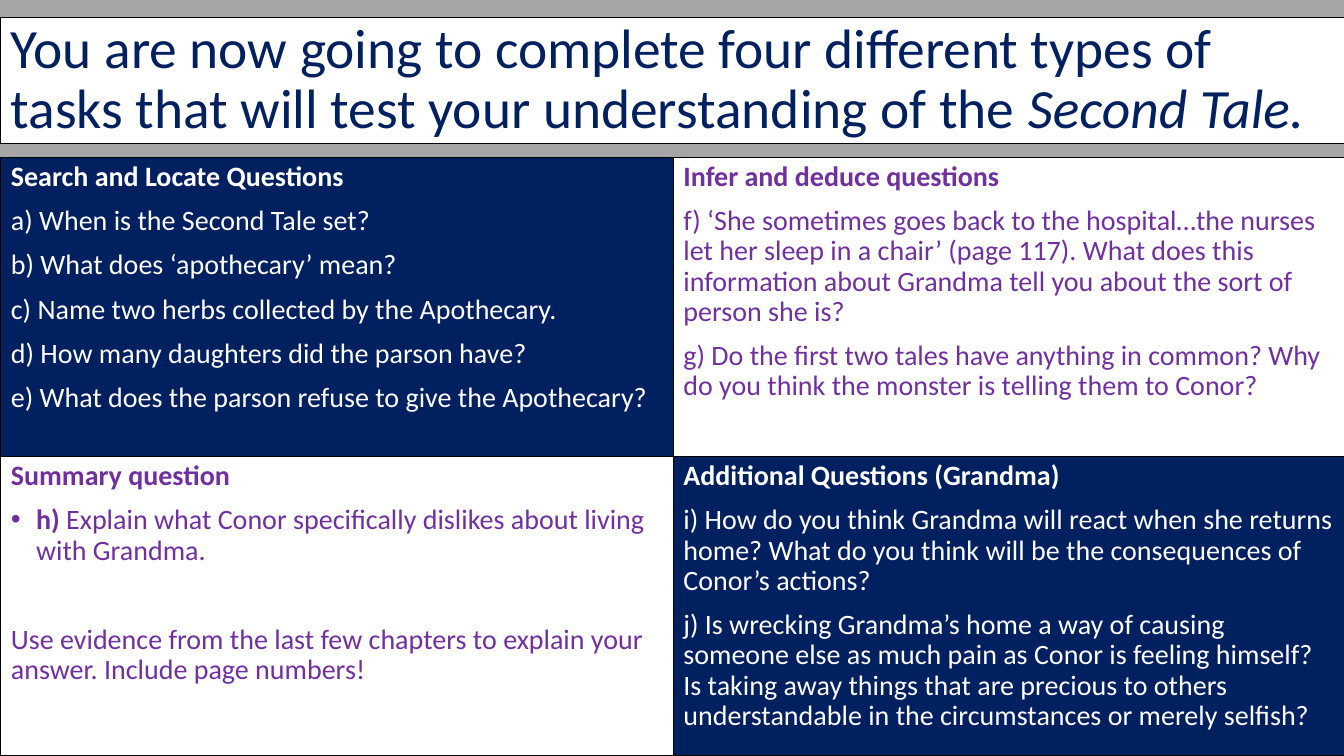
from pptx import Presentation
from pptx.dml.color import RGBColor
from pptx.enum.shapes import MSO_SHAPE
from pptx.enum.text import MSO_ANCHOR, PP_ALIGN
from pptx.oxml import parse_xml
from pptx.oxml.ns import nsdecls
from pptx.util import Pt

RECTANGLE = MSO_SHAPE.RECTANGLE
TOP, MIDDLE = MSO_ANCHOR.TOP, MSO_ANCHOR.MIDDLE
LEFT = PP_ALIGN.LEFT

EMU_PER_PX = 9144  # 100 px to the inch
FONT = "Calibri"
COLORS = {"page": "A5A5A5", "navy": "002060", "white": "FFFFFF",
          "purple": "7030A0", "black": "000000"}
INDENT = 25
PARA_GAP, WIDE_GAP = 10, 42

TITLE = ("You are now going to complete four different types of tasks "
         "that will test your understanding of the ")
TITLE_BOOK = "Second Tale."

SEARCH_QUESTIONS = [
    "a) When is the Second Tale set?",
    "b) What does ‘apothecary’ mean?",
    "c) Name two herbs collected by the Apothecary.",
    "d) How many daughters did the parson have?",
    "e) What does the parson refuse to give the Apothecary?",
]
INFER_QUESTIONS = [
    "f) ‘She sometimes goes back to the hospital…the nurses let her sleep in "
    "a chair’ (page 117). What does this information about Grandma tell you "
    "about the sort of person she is?",
    "g) Do the first two tales have anything in common? Why do you think the "
    "monster is telling them to Conor?",
]
SUMMARY_LABEL = "h) "
SUMMARY_TASK = "Explain what Conor specifically dislikes about living with Grandma."
SUMMARY_HINT = ("Use evidence from the last few chapters to explain your answer. "
                "Include page numbers!")
GRANDMA_QUESTIONS = [
    "i) How do you think Grandma will react when she returns home? What do you "
    "think will be the consequences of Conor’s actions?",
    "j) Is wrecking Grandma’s home a way of causing someone else as much pain "
    "as Conor is feeling himself? Is taking away things that are precious to "
    "others understandable in the circumstances or merely selfish?",
]


def px(length):
    return length * EMU_PER_PX


def color(name):
    return RGBColor.from_string(COLORS[name])


def add_panel(page, box, fill, anchor):
    """Add an outlined rectangle and return its text frame."""
    panel = page.shapes.add_shape(RECTANGLE, *map(px, box))
    panel.shadow.inherit = False
    panel.fill.solid()
    panel.fill.fore_color.rgb = color(fill)
    panel.line.color.rgb = color("black")
    panel.line.width = Pt(0.75)
    frame = panel.text_frame
    frame.word_wrap = True
    frame.vertical_anchor = anchor
    return frame


def style_para(para, size, ink, bold=False, gap=0):
    para.alignment = LEFT
    para.line_spacing = 0.9
    para.space_before = Pt(gap)
    para.font.name = FONT
    para.font.size = Pt(size)
    para.font.bold = bold
    para.font.color.rgb = color(ink)


def add_span(para, text, **emphasis):
    """Add a run that repeats the paragraph's font, with its own emphasis."""
    span = para.add_run()
    span.text = text
    span.font.name = para.font.name
    span.font.size = para.font.size
    span.font.color.rgb = para.font.color.rgb
    for name, value in emphasis.items():
        setattr(span.font, name, value)


def add_bullet(para):
    props = para._p.get_or_add_pPr()
    props.set("marL", str(px(INDENT)))
    props.set("indent", str(-px(INDENT)))
    bullet_tags = (f'<a:buFont {nsdecls("a")} typeface="Arial"/>',
                   f'<a:buChar {nsdecls("a")} char="•"/>')
    defaults = props.find("{*}defRPr")
    for tag in bullet_tags:
        defaults.addprevious(parse_xml(tag))


def add_title(page, box):
    para = add_panel(page, box, "white", MIDDLE).paragraphs[0]
    style_para(para, 39.6, "navy")
    add_span(para, TITLE)
    add_span(para, TITLE_BOOK, italic=True)


def add_text(frame, text, ink, gap=PARA_GAP):
    para = frame.add_paragraph()
    style_para(para, 20, ink, gap=gap)
    add_span(para, text)


def add_task_panel(page, box, fill, ink, heading):
    frame = add_panel(page, box, fill, TOP)
    para = frame.paragraphs[0]
    style_para(para, 20, ink, bold=True, gap=PARA_GAP)
    add_span(para, heading, bold=True)
    return frame


def add_questions(page, box, fill, ink, heading, questions):
    frame = add_task_panel(page, box, fill, ink, heading)
    for question in questions:
        add_text(frame, question, ink)


def add_summary(page, box, fill, ink):
    frame = add_task_panel(page, box, fill, ink, "Summary question")
    task = frame.add_paragraph()
    style_para(task, 20, ink, gap=PARA_GAP)
    add_bullet(task)
    add_span(task, SUMMARY_LABEL, bold=True)
    add_span(task, SUMMARY_TASK)
    add_text(frame, SUMMARY_HINT, ink, gap=WIDE_GAP)


def add_task_grid(page, box):
    """Fill the box with two rows of two task panels."""
    left, top, width, height = box
    half_width, half_height = width // 2, height // 2
    right, bottom = left + half_width, top + half_height
    size = (half_width, half_height)
    add_questions(page, (left, top, *size), "navy", "white",
                  "Search and Locate Questions", SEARCH_QUESTIONS)
    add_questions(page, (right, top, *size), "white", "purple",
                  "Infer and deduce questions", INFER_QUESTIONS)
    add_summary(page, (left, bottom, *size), "white", "purple")
    add_questions(page, (right, bottom, *size), "navy", "white",
                  "Additional Questions (Grandma)", GRANDMA_QUESTIONS)


def main():
    deck = Presentation()
    deck.slide_width, deck.slide_height = px(1333), px(750)
    page = deck.slides.add_slide(deck.slide_layouts[6])
    page.background.fill.solid()
    page.background.fill.fore_color.rgb = color("page")
    add_title(page, (1, 17, 1333, 125))
    add_task_grid(page, (1, 156, 1334, 594))
    deck.save("out.pptx")


if __name__ == "__main__":
    main()
